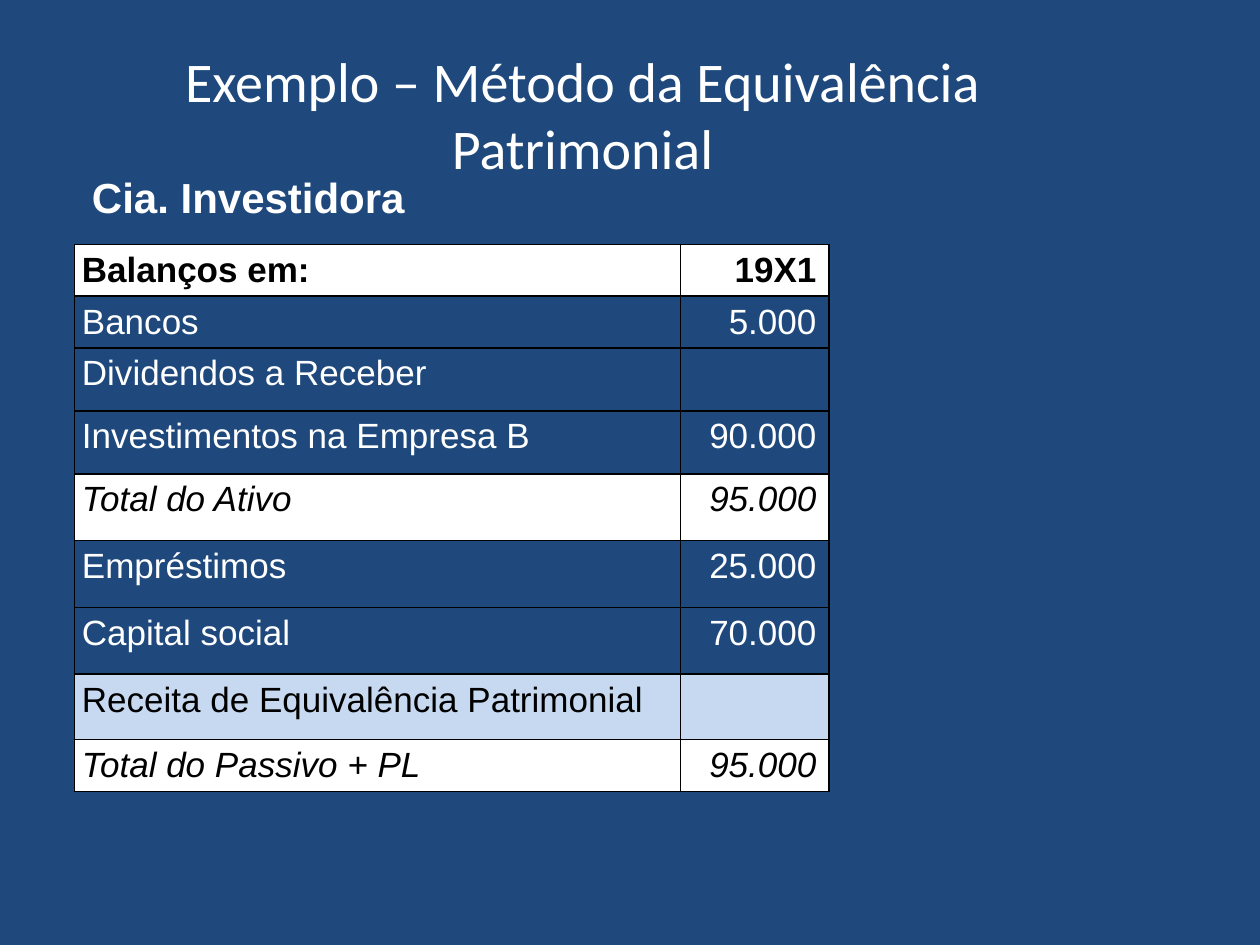
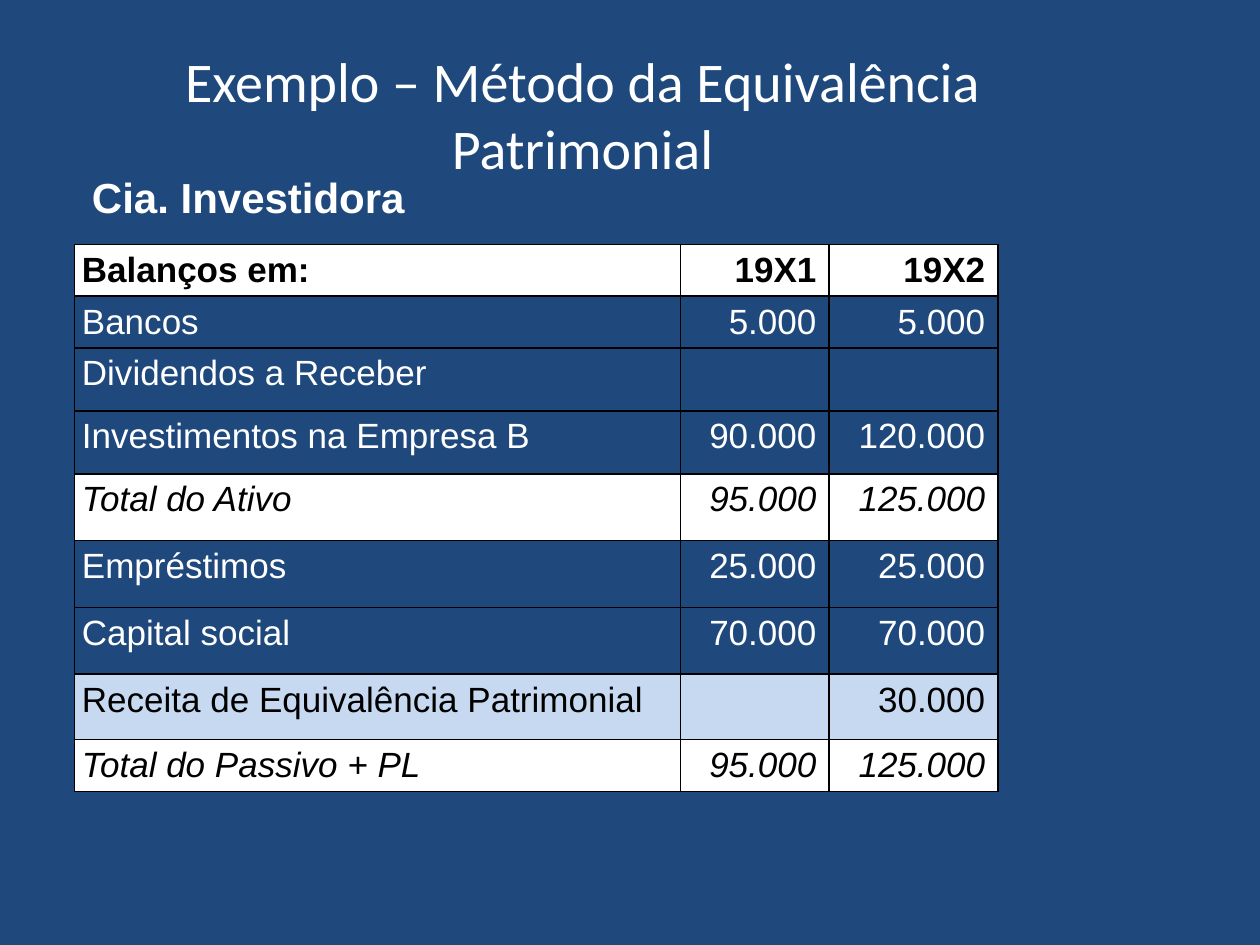
from dataclasses import dataclass

from lxml import etree
from pptx import Presentation
from pptx import util as u
from pptx.dml.color import RGBColor
from pptx.enum import text
from pptx.oxml import ns


@dataclass(frozen=True)
class Theme:
    navy: str = "1F497D"
    white: str = "FFFFFF"
    black: str = "000000"
    pale_blue: str = "C6D9F1"
    title_font: str = "Calibri"
    body_font: str = "Arial"
    title_size: int = 32
    company_size: int = 24
    table_size: int = 20
    border_width: int = 1


THEME = Theme()
TITLE = "Exemplo – Método da Equivalência Patrimonial"
COMPANY = "Cia. Investidora"

# Row styles: fill, text colour, bold, italic
ROW_STYLES = {
    "header": (THEME.white, THEME.black, True, False),
    "account": (None, THEME.white, False, False),
    "total": (THEME.white, THEME.black, False, True),
    "income": (THEME.pale_blue, THEME.black, False, False),
}

# Balance sheet: style, row height, account, value for each year
BALANCE = [
    ("header", 0.41, "Balanços em:", "19X1", "19X2"),
    ("account", 0.41, "Bancos", "5.000", "5.000"),
    ("account", 0.5, "Dividendos a Receber", "", ""),
    ("account", 0.5, "Investimentos na Empresa B", "90.000", "120.000"),
    ("total", 0.53, "Total do Ativo", "95.000", "125.000"),
    ("account", 0.53, "Empréstimos", "25.000", "25.000"),
    ("account", 0.53, "Capital social", "70.000", "70.000"),
    ("income", 0.52, "Receita de Equivalência Patrimonial", "", "30.000"),
    ("total", 0.41, "Total do Passivo + PL", "95.000", "125.000"),
]
COLUMN_WIDTHS = [4.81, 1.18, 1.34]


def style_text(paragraph, font_name, size, color, bold=False, italic=False):
    font = paragraph.font
    for run in paragraph.runs:
        font = run.font
    font.name, font.size = font_name, u.Pt(size)
    font.bold, font.italic = bold, italic
    font.color.rgb = RGBColor.from_string(color)


def set_insets(box):
    """Give a text frame or table cell the shared narrow insets."""
    box.margin_left, box.margin_right = u.Inches(0.06), u.Inches(0.1)
    box.margin_top = box.margin_bottom = u.Inches(0.05)


def add_title(slide):
    title = slide.shapes.title
    title.left, title.top = u.Inches(0.5), u.Inches(0.31)
    title.width, title.height = u.Inches(8.25), u.Inches(1.18)
    frame = title.text_frame
    frame.text = TITLE
    frame.vertical_anchor = text.MSO_ANCHOR.MIDDLE
    frame.paragraphs[0].alignment = text.PP_ALIGN.CENTER
    style_text(frame.paragraphs[0], THEME.title_font, THEME.title_size, THEME.white)


def add_company_name(slide):
    company = slide.shapes.add_textbox(
        u.Inches(0.67), u.Inches(1.31), u.Inches(3.78), u.Inches(0.5))
    frame = company.text_frame
    frame.word_wrap = True
    frame.auto_size = text.MSO_AUTO_SIZE.SHAPE_TO_FIT_TEXT
    set_insets(frame)
    frame.text = COMPANY
    style_text(frame.paragraphs[0], THEME.body_font, THEME.company_size,
               THEME.white, bold=True)


def add_borders(cell):
    """Draw all four cell edges; they must precede the fill in the XML."""
    properties = cell._tc.get_or_add_tcPr()
    for position, edge in enumerate(("a:lnL", "a:lnR", "a:lnT", "a:lnB")):
        line = etree.Element(ns.qn(edge), w=str(u.Pt(THEME.border_width)))
        fill = etree.SubElement(line, ns.qn("a:solidFill"))
        etree.SubElement(fill, ns.qn("a:srgbClr"), val=THEME.black)
        properties.insert(position, line)


def fill_cell(cell, content, row_style, is_value):
    fill, color, bold, italic = ROW_STYLES[row_style]
    if fill:
        cell.fill.solid()
        cell.fill.fore_color.rgb = RGBColor.from_string(fill)
    else:
        cell.fill.background()
    add_borders(cell)
    set_insets(cell)
    cell.text_frame.text = content
    entry = cell.text_frame.paragraphs[0]
    entry.alignment = text.PP_ALIGN.RIGHT if is_value else text.PP_ALIGN.LEFT
    style_text(entry, THEME.body_font, THEME.table_size, color, bold, italic)


def add_balance_table(slide, year_count):
    widths = COLUMN_WIDTHS[:year_count + 1]
    total_height = sum(row[1] for row in BALANCE)
    balance = slide.shapes.add_table(
        len(BALANCE), len(widths), u.Inches(0.59), u.Inches(1.94),
        u.Inches(sum(widths)), u.Inches(total_height)).table
    balance.first_row = balance.horz_banding = False
    for column, width in zip(balance.columns, widths):
        column.width = u.Inches(width)
    for row, (row_style, height, *entries) in zip(balance.rows, BALANCE):
        row.height = u.Inches(height)
        for index, (cell, entry) in enumerate(zip(row.cells, entries)):
            fill_cell(cell, entry, row_style, is_value=index > 0)


def add_balance_slide(deck, year_count):
    slide = deck.slides.add_slide(deck.slide_layouts.get_by_name("Title Only"))
    add_title(slide)
    add_balance_table(slide, year_count)
    add_company_name(slide)


def main():
    deck = Presentation()
    deck.slide_width, deck.slide_height = u.Inches(10), u.Inches(7.5)

    # Shared background
    background = deck.slide_master.background.fill
    background.solid()
    background.fore_color.rgb = RGBColor.from_string(THEME.navy)

    # First year alone, then both years
    for year_count in (1, 2):
        add_balance_slide(deck, year_count)
    deck.save("out.pptx")


if __name__ == "__main__":
    main()
